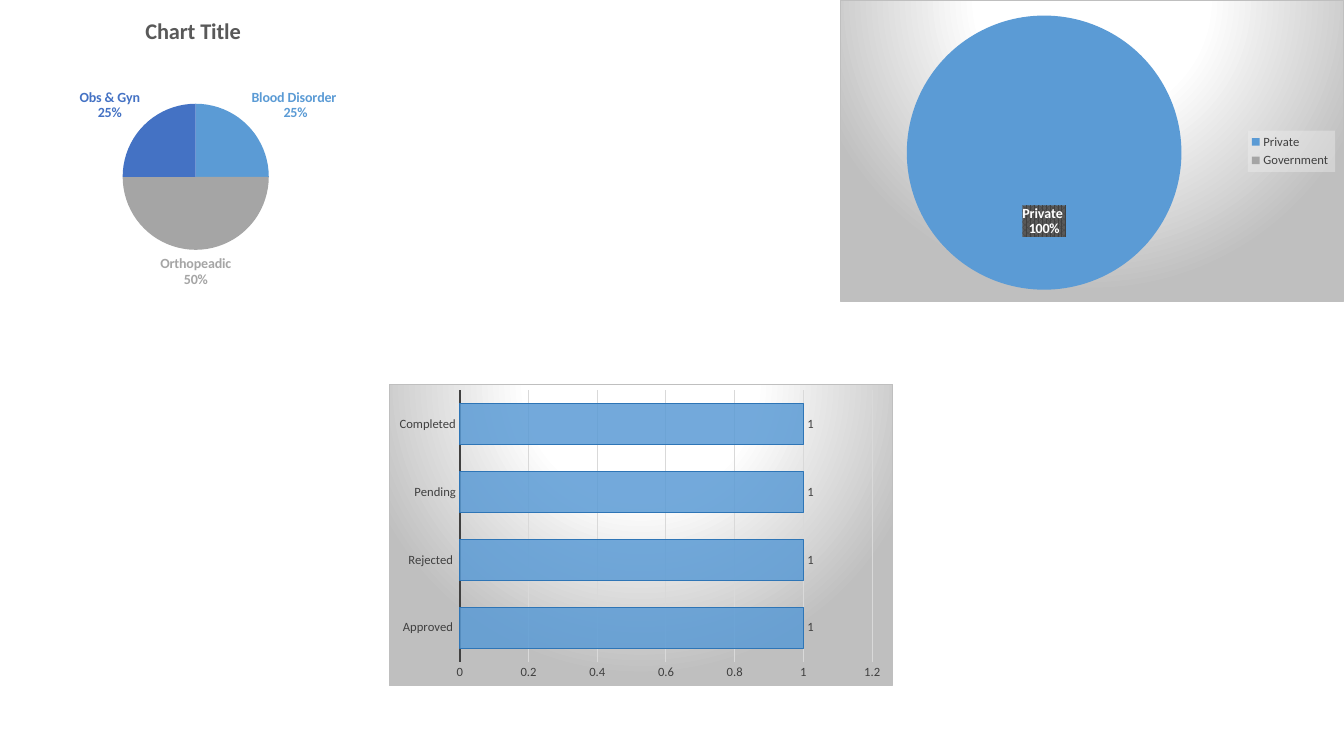
from dataclasses import dataclass

from lxml.etree import SubElement
from pptx import Presentation
from pptx.chart.data import CategoryChartData
from pptx.dml.color import RGBColor
from pptx.enum.chart import XL_CHART_TYPE, XL_LABEL_POSITION, XL_LEGEND_POSITION, XL_TICK_MARK
from pptx.oxml import parse_xml
from pptx.oxml.ns import nsdecls, qn
from pptx.util import Inches, Pt

COLUMNS, ROWS = 160, 90


@dataclass(frozen=True)
class Theme:
    font: str = "Calibri"
    title_size: float = 16
    label_size: float = 10
    small_size: float = 9
    hairline: float = 0.75
    axis_line: float = 1.5
    black: str = "000000"
    white: str = "FFFFFF"
    dark: str = "404040"
    gray: str = "595959"
    border: str = "BFBFBF"
    grid: str = "D9D9D9"
    pale: str = "F2F2F2"
    blue: str = "5B9BD5"
    orange: str = "ED7D31"
    silver: str = "A5A5A5"
    gold: str = "FFC000"
    navy: str = "4472C4"
    bar_edge: str = "2E75B6"


class ChartSlide:
    def __init__(self, deck, theme):
        self.deck = deck
        self.theme = theme
        self.slide = deck.slides.add_slide(deck.slide_layouts[6])

    def style_font(self, font, size, color, bold=False):
        font.name = self.theme.font
        font.size = Pt(size)
        font.bold = bold
        font.color.rgb = RGBColor.from_string(color)

    def style_line(self, line, color, width):
        line.color.rgb = RGBColor.from_string(color)
        line.width = Pt(width)

    def add_chart(self, kind, column, row, values, plot_area):
        """Place a 60 by 36 cell chart; plot_area holds shares of the chart's size."""
        data = CategoryChartData()
        data.categories = [name for name, _ in values]
        data.add_series("Series 1", [value for _, value in values])
        cell_width = self.deck.slide_width / COLUMNS
        cell_height = self.deck.slide_height / ROWS
        chart = self.slide.shapes.add_chart(
            kind, round(column * cell_width), round(row * cell_height),
            round(60 * cell_width), round(36 * cell_height), data).chart
        chart.has_title = False
        chart.has_legend = False
        self.style_font(chart.font, self.theme.label_size, self.theme.black)
        self.set_plot_area(chart, plot_area)
        return chart

    def set_plot_area(self, chart, plot_area):
        area = chart.element.xpath("c:chart/c:plotArea")[0]
        for old in area.findall(qn("c:layout")):
            area.remove(old)
        layout = parse_xml(f'<c:layout {nsdecls("c")}/>')
        manual = SubElement(layout, qn("c:manualLayout"))
        settings = [("layoutTarget", "inner"), ("xMode", "edge"), ("yMode", "edge")]
        for name, value in settings + list(zip("xywh", plot_area)):
            SubElement(manual, qn(f"c:{name}")).set("val", str(value))
        area.insert(0, layout)

    def set_box_style(self, chart, owner, content):
        """Give the chart part at the xpath owner the fill and line in content."""
        box = parse_xml(f'<c:spPr {nsdecls("c", "a")}>{content}</c:spPr>')
        chart.element.xpath(f"{owner}/c:txPr")[0].addprevious(box)

    def add_spotlight(self, chart):
        theme = self.theme
        stops = "".join(
            f'<a:gs pos="{share * 1000}"><a:srgbClr val="{color}"/></a:gs>'
            for share, color in ((0, theme.white), (39, theme.white), (100, theme.border)))
        self.set_box_style(chart, ".", (
            f'<a:gradFill><a:gsLst>{stops}</a:gsLst><a:path path="circle">'
            '<a:fillToRect l="50000" t="-80000" r="50000" b="180000"/></a:path></a:gradFill>'
            f'<a:ln w="{Pt(theme.hairline)}"><a:solidFill>'
            f'<a:srgbClr val="{theme.border}"/></a:solidFill></a:ln>'))

    def add_title(self, chart, text):
        frame = chart.chart_title.text_frame
        frame.text = text
        self.style_font(frame.paragraphs[0].font, self.theme.title_size, self.theme.gray, True)
        chart.chart_title.include_in_layout = False

    def add_legend(self, chart):
        chart.has_legend = True
        legend = chart.legend
        legend.position = XL_LEGEND_POSITION.RIGHT
        legend.include_in_layout = False
        self.style_font(legend.font, self.theme.small_size, self.theme.dark)
        self.set_box_style(chart, "c:chart/c:legend", (
            f'<a:solidFill><a:srgbClr val="{self.theme.pale}">'
            '<a:alpha val="39000"/></a:srgbClr></a:solidFill>'))

    def add_pie(self, column, row, values, colors, plot_area, label_color, position):
        chart = self.add_chart(XL_CHART_TYPE.PIE, column, row, values, plot_area)
        plot = chart.plots[0]
        plot.vary_by_categories = True
        series = plot.series[0]
        labels = series.data_labels
        labels.position = position
        self.style_font(labels.font, self.theme.label_size, label_color, True)
        for index, color in enumerate(colors):
            fill = series.points[index].format.fill
            fill.solid()
            fill.fore_color.rgb = RGBColor.from_string(color)
        return chart

    def color_labels(self, chart, colors):
        for index, color in enumerate(colors):
            label = chart.plots[0].series[0].points[index].data_label
            label.position = XL_LABEL_POSITION.OUTSIDE_END
            self.style_font(label.font, self.theme.label_size, color, True)

    def show_name_and_percent(self, chart):
        for label in chart.element.xpath(".//c:dLbls | .//c:dLbl"):
            for name, value in (("showVal", "0"), ("showCatName", "1"), ("showPercent", "1")):
                label.find(qn(f"c:{name}")).set("val", value)
            separator = parse_xml(f'<c:separator {nsdecls("c")}>\n</c:separator>')
            label.find(qn("c:showBubbleSize")).addnext(separator)

    def hide_label(self, chart, index):
        chart.element.xpath(".//c:dLbls")[0].insert(0, parse_xml(
            f'<c:dLbl {nsdecls("c")}><c:idx val="{index}"/><c:delete val="1"/></c:dLbl>'))

    def add_label_pattern(self, chart):
        self.set_box_style(chart, ".//c:dLbls", (
            '<a:pattFill prst="pct75">'
            f'<a:fgClr><a:srgbClr val="{self.theme.dark}"/></a:fgClr>'
            f'<a:bgClr><a:srgbClr val="{self.theme.gray}"/></a:bgClr></a:pattFill>'))

    def add_bars(self, column, row, values, plot_area):
        theme = self.theme
        chart = self.add_chart(XL_CHART_TYPE.BAR_CLUSTERED, column, row, values, plot_area)
        plot = chart.plots[0]
        plot.vary_by_categories = False
        plot.gap_width = 65
        series = plot.series[0]
        series.format.fill.solid()
        series.format.fill.fore_color.rgb = RGBColor.from_string(theme.blue)
        color = chart.element.xpath(".//c:ser/c:spPr/a:solidFill/a:srgbClr")[0]
        SubElement(color, qn("a:alpha")).set("val", "85000")
        self.style_line(series.format.line, theme.bar_edge, theme.hairline)
        series.data_labels.show_value = True
        series.data_labels.position = XL_LABEL_POSITION.OUTSIDE_END
        self.style_font(series.data_labels.font, theme.small_size, theme.dark)
        names, scale = chart.category_axis, chart.value_axis
        for axis in (names, scale):
            axis.major_tick_mark = axis.minor_tick_mark = XL_TICK_MARK.NONE
            self.style_font(axis.tick_labels.font, theme.small_size, theme.dark)
        self.style_line(names.format.line, theme.dark, theme.axis_line)
        scale.minimum_scale, scale.maximum_scale, scale.major_unit = 0, 1.2, 0.2
        scale.format.line.fill.background()
        scale.has_major_gridlines = True
        self.style_line(scale.major_gridlines.format.line, theme.grid, theme.hairline)
        return chart


def main():
    deck = Presentation()
    deck.slide_width, deck.slide_height = Inches(13.33), Inches(7.5)
    theme = Theme()
    page = ChartSlide(deck, theme)

    colors = [theme.blue, theme.orange, theme.silver, theme.gold, theme.navy]
    departments = page.add_pie(
        -7, 0,
        [("Blood Disorder ", 25), ("", None), ("Orthopeadic", 50), ("", None), ("Obs & Gyn", 25)],
        colors, (0.36, 0.34, 0.29, 0.49), theme.gray, XL_LABEL_POSITION.OUTSIDE_END)
    page.add_title(departments, "Chart Title")
    page.color_labels(departments, colors)
    page.show_name_and_percent(departments)

    sectors = page.add_pie(
        100, 0, [("Private ", 100), ("Government ", 0)], [theme.blue, theme.silver],
        (0.13, 0.05, 0.55, 0.91), theme.white, XL_LABEL_POSITION.CENTER)
    page.add_spotlight(sectors)
    page.add_legend(sectors)
    page.add_label_pattern(sectors)
    page.show_name_and_percent(sectors)
    page.hide_label(sectors, 1)

    statuses = page.add_bars(
        46.3, 45.7, [(name, 1) for name in ("Approved ", "Rejected ", "Pending", "Completed")],
        (0.14, 0.02, 0.82, 0.9))
    page.add_spotlight(statuses)

    deck.save("out.pptx")


if __name__ == "__main__":
    main()
